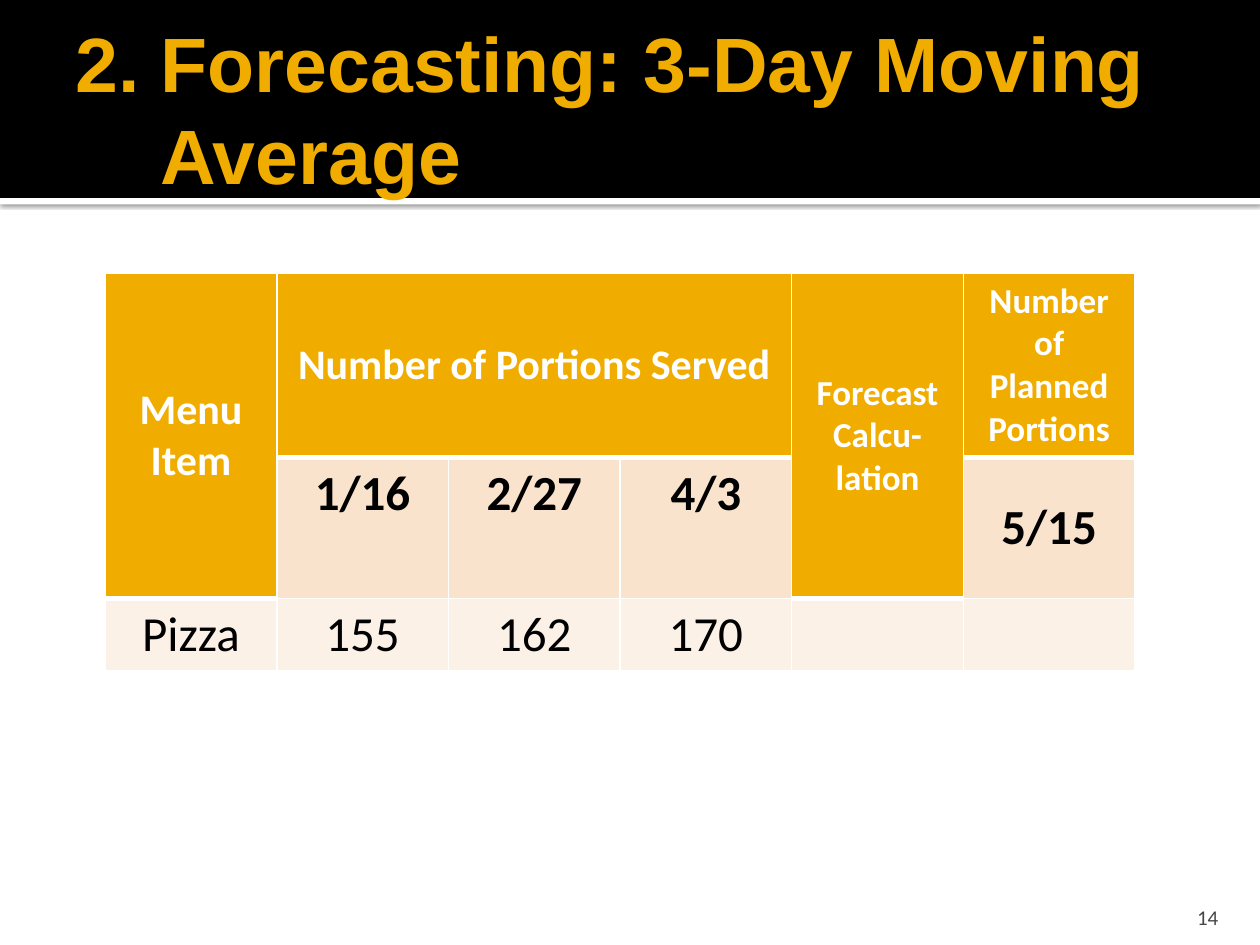
from lxml import etree
from pptx import Presentation
from pptx import util as u
from pptx.dml.color import RGBColor
from pptx.enum import shapes, text
from pptx.oxml import ns

COLOURS = {
    "black": "000000", "white": "FFFFFF", "gold": "F0AD00",
    "peach": "F9E3CC", "cream": "FCF1E7", "grey": "454545",
}
COLUMNS = 6
COLUMN_WIDTH = 3.46
ROW_HEIGHTS = (3.70, 2.84, 1.43)
MIDDLE, TOP = text.MSO_ANCHOR.MIDDLE, text.MSO_ANCHOR.TOP
# row, column, wording, size, bold, colour, anchor
CELLS = [
    (0, 0, "Menu Item", 24, True, "white", MIDDLE),
    (0, 1, "Number of Portions Served", 24, True, "white", MIDDLE),
    (0, 4, "Forecast Calcu-lation", 20, True, "white", MIDDLE),
    (0, 5, "Number of Planned Portions", 20, True, "white", MIDDLE),
    (1, 1, "1/16", 28, True, "black", TOP),
    (1, 2, "2/27", 28, True, "black", TOP),
    (1, 3, "4/3", 28, True, "black", TOP),
    (1, 5, "5/15", 28, True, "black", MIDDLE),
    (2, 0, "Pizza", 28, False, "black", MIDDLE),
    (2, 1, "155", 28, False, "black", MIDDLE),
    (2, 2, "162", 28, False, "black", MIDDLE),
    (2, 3, "170", 28, False, "black", MIDDLE),
]
MERGES = [((0, 0), (1, 0)), ((0, 1), (0, 3)), ((0, 4), (1, 4))]


def colour(name):
    """Return the named colour."""
    return RGBColor.from_string(COLOURS[name])


def add_span(para, wording, size, fill, font="Calibri", bold=False):
    """Add one formatted run to a paragraph."""
    span = para.add_run()
    span.text = wording
    span.font.name = font
    span.font.size = u.Pt(size)
    span.font.bold = bold
    span.font.color.rgb = colour(fill)


def add_band(page, top, height, fill):
    """Add a full-width rectangle without line or shadow."""
    band = page.shapes.add_shape(shapes.MSO_SHAPE.RECTANGLE, 0, u.Cm(top),
                                 u.Cm(25.4), u.Cm(height))
    band.shadow.inherit = False
    band.fill.solid()
    band.fill.fore_color.rgb = colour(fill)
    band.line.fill.background()
    return band


def add_soft_shadow(band):
    """Give a band a soft shadow falling downwards."""
    effects = band.element.spPr.find(ns.qn("a:effectLst"))
    shadow = etree.SubElement(effects, ns.qn("a:outerShdw"),
                              blurRad=str(u.Pt(2.5)), dist=str(u.Pt(0.8)),
                              dir="5400000", algn="tl", rotWithShape="0")
    tint = etree.SubElement(shadow, ns.qn("a:srgbClr"), val=COLOURS["black"])
    etree.SubElement(tint, ns.qn("a:alpha"), val="60000")


def fill_title(page):
    """Place the title with a hanging second line, in front of the bands."""
    title = page.shapes.title
    title.element.getparent().append(title.element)
    title.left, title.top = u.Cm(1.27), u.Cm(0.43)
    title.width, title.height = u.Cm(22.86), u.Cm(3.48)
    frame = title.text_frame
    frame.auto_size = text.MSO_AUTO_SIZE.NONE
    frame.word_wrap = True
    frame.vertical_anchor = MIDDLE
    frame.margin_left = u.Cm(0.25)
    frame.margin_right = frame.margin_top = frame.margin_bottom = u.Cm(0.13)
    para = frame.paragraphs[0]
    para.alignment = text.PP_ALIGN.LEFT
    hang = u.Cm(1.71)
    properties = para._p.get_or_add_pPr()
    properties.set("marL", str(hang))
    properties.set("indent", str(-hang))
    add_span(para, "2. Forecasting: 3-Day Moving", 44, "gold", "Arial", True)
    para.add_line_break()
    add_span(para, "Average", 44, "gold", "Arial", True)


def add_borders(cell, bottom):
    """Draw white cell borders, with the bottom one as wide as given."""
    properties = cell._tc.get_or_add_tcPr()
    for side, width in (("L", 1), ("R", 1), ("T", 1), ("B", bottom)):
        line = etree.SubElement(properties, ns.qn("a:ln" + side),
                                w=str(u.Pt(width)))
        paint = etree.SubElement(line, ns.qn("a:solidFill"))
        etree.SubElement(paint, ns.qn("a:srgbClr"), val=COLOURS["white"])


def add_forecast_table(page):
    """Add the table of portions served and planned."""
    table = page.shapes.add_table(
        len(ROW_HEIGHTS), COLUMNS, u.Cm(2.12), u.Cm(5.51),
        u.Cm(COLUMN_WIDTH * COLUMNS), u.Cm(sum(ROW_HEIGHTS))).table
    for column in table.columns:
        column.width = u.Cm(COLUMN_WIDTH)
    for row, height in enumerate(ROW_HEIGHTS):
        table.rows[row].height = u.Cm(height)
        for column in range(COLUMNS):
            header = row == 0 or (row == 1 and column in (0, 4))
            cell = table.cell(row, column)
            add_borders(cell, 3 if header else 1)
            cell.fill.solid()
            fill = "gold" if header else ("peach" if row == 1 else "cream")
            cell.fill.fore_color.rgb = colour(fill)
    for first, last in MERGES:
        table.cell(*first).merge(table.cell(*last))
    for row, column, wording, size, bold, fill, anchor in CELLS:
        cell = table.cell(row, column)
        cell.vertical_anchor = anchor
        para = cell.text_frame.paragraphs[0]
        para.alignment = text.PP_ALIGN.CENTER
        add_span(para, wording, size, fill, bold=bold)


def add_page_number(page):
    """Add the page number at the lower right."""
    box = page.shapes.add_textbox(u.Cm(22.78), u.Cm(17.98),
                                  u.Cm(2.03), u.Cm(0.76))
    frame = box.text_frame
    frame.word_wrap = True
    frame.vertical_anchor = text.MSO_ANCHOR.BOTTOM
    frame.margin_bottom = 0
    para = frame.paragraphs[0]
    para.alignment = text.PP_ALIGN.RIGHT
    add_span(para, "14", 12, "grey")


def main():
    """Build the deck and save it."""
    deck = Presentation()
    deck.slide_width, deck.slide_height = u.Cm(25.4), u.Cm(19.05)
    page = deck.slides.add_slide(deck.slide_layouts[5])
    add_soft_shadow(add_band(page, 3.99, 0.13, "white"))
    add_band(page, 0, 3.99, "black")
    fill_title(page)
    add_forecast_table(page)
    add_page_number(page)
    deck.save("out.pptx")


main()
